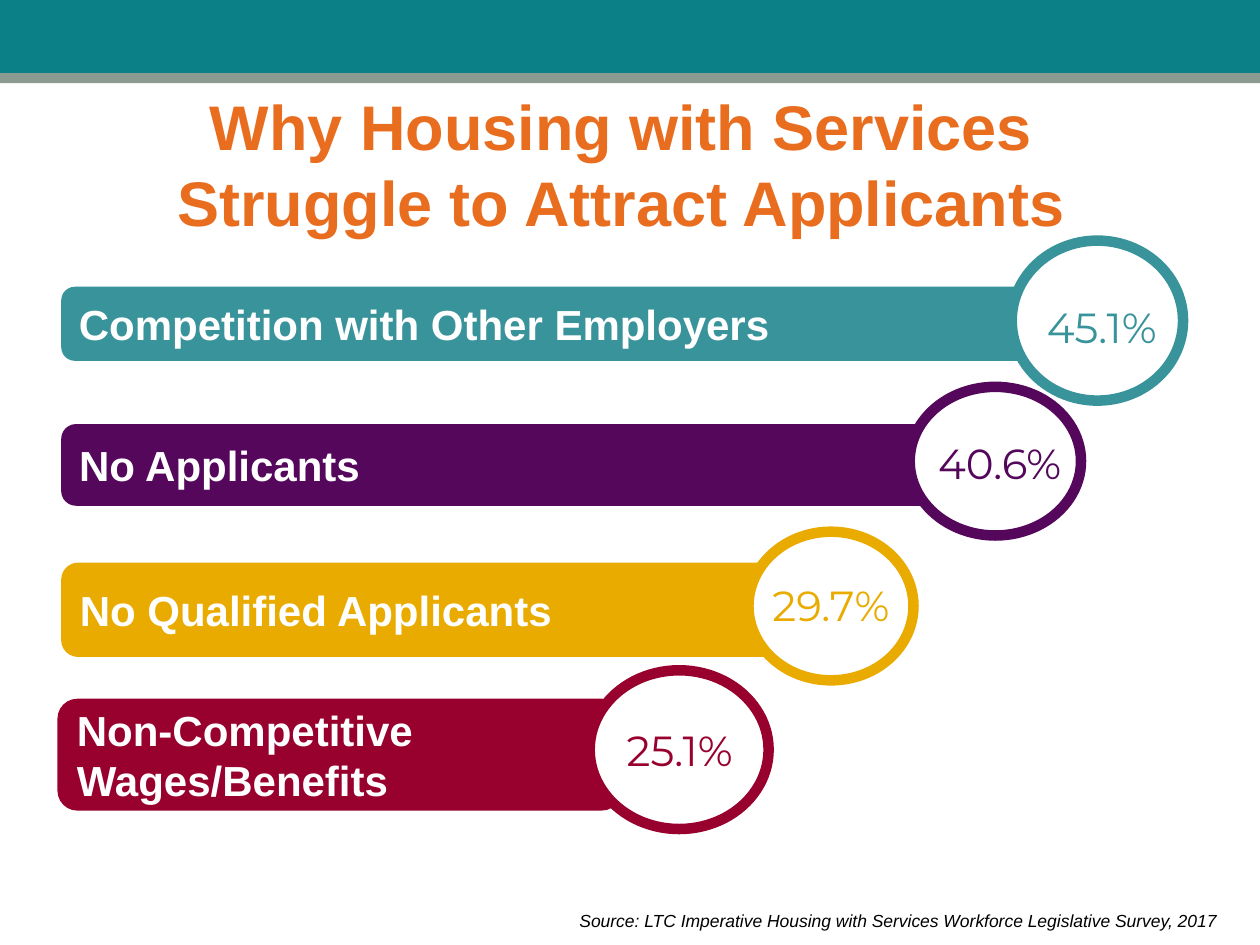
from pptx import Presentation
from pptx.dml.color import RGBColor
from pptx.enum.shapes import MSO_SHAPE
from pptx.enum.text import MSO_ANCHOR, PP_ALIGN
from pptx.util import Inches, Pt

WIDTH, HEIGHT = 10, 7.5
TEAL_BAND = RGBColor(0x0B, 0x81, 0x87)
GRAY_BAND = RGBColor(0x8B, 0x9B, 0x92)
ORANGE = RGBColor(0xE8, 0x6D, 0x1F)
TEAL = RGBColor(0x38, 0x93, 0x9B)
PURPLE = RGBColor(0x54, 0x07, 0x5B)
GOLD = RGBColor(0xEA, 0xAB, 0x00)
CRIMSON = RGBColor(0x98, 0x00, 0x2E)
WHITE = RGBColor(0xFF, 0xFF, 0xFF)
BLACK = RGBColor(0x00, 0x00, 0x00)

LABEL_SIZE = (1.43, 0.5)

# Reason, share, colour, bar area, circle area, label corner
REASONS = [
    ("Competition with Other Employers", "45.1%", TEAL,
     (0.5, 2.29, 7.75, 0.56), (8.03, 1.91, 1.36, 1.27), (8.03, 2.34)),
    ("No Applicants", "40.6%", PURPLE,
     (0.5, 3.38, 6.96, 0.62), (7.22, 3.07, 1.36, 1.18), (7.22, 3.42)),
    ("No Qualified Applicants", "29.7%", GOLD,
     (0.5, 4.48, 5.67, 0.72), (5.94, 4.22, 1.31, 1.18), (5.88, 4.55)),
    ("Non-Competitive\nWages/Benefits", "25.1%", CRIMSON,
     (0.47, 5.56, 4.45, 0.86), (4.68, 5.32, 1.42, 1.26), (4.68, 5.7)),
]


def inches(area):
    return [Inches(length) for length in area]


def write(box, text, size, color, align=PP_ALIGN.LEFT, font="Arial",
          bold=False, italic=False):
    frame = box.text_frame
    frame.word_wrap = True
    frame.text = text
    for para in frame.paragraphs:
        para.alignment = align
        for span in para.runs:
            span.font.name = font
            span.font.size = Pt(size)
            span.font.bold = bold
            span.font.italic = italic
            span.font.color.rgb = color


def add_block(page, kind, area, fill, line=None, line_width=0):
    block = page.shapes.add_shape(kind, *inches(area))
    block.shadow.inherit = False
    block.fill.solid()
    block.fill.fore_color.rgb = fill
    if line is None:
        block.line.fill.background()
    else:
        block.line.color.rgb = line
        block.line.width = Pt(line_width)
    return block


def add_text(page, area, text, size, color, **style):
    box = page.shapes.add_textbox(*inches(area))
    write(box, text, size, color, **style)


def add_title(page, text):
    title = page.shapes.title
    title.left, title.top, title.width, title.height = inches(
        (0.5, 0.67, WIDTH - 1, 1.25))
    title.text_frame.vertical_anchor = MSO_ANCHOR.MIDDLE
    write(title, text, 36, ORANGE, align=PP_ALIGN.CENTER, bold=True)


def add_reason(page, reason, share, color, bar_area, circle_area, corner):
    bar = add_block(page, MSO_SHAPE.ROUNDED_RECTANGLE, bar_area, color, color, 2)
    bar.text_frame.vertical_anchor = MSO_ANCHOR.MIDDLE
    write(bar, reason, 24, WHITE, bold=True)
    add_block(page, MSO_SHAPE.OVAL, circle_area, WHITE, color, 6)
    add_text(page, corner + LABEL_SIZE, share, 24, color,
             align=PP_ALIGN.CENTER, font="Montserrat")


def main():
    deck = Presentation()
    deck.slide_width, deck.slide_height = inches((WIDTH, HEIGHT))
    page = deck.slides.add_slide(deck.slide_layouts[5])

    # Header bands
    add_block(page, MSO_SHAPE.RECTANGLE, (0, 0, WIDTH, 0.58), TEAL_BAND)
    add_block(page, MSO_SHAPE.RECTANGLE, (0, 0.58, WIDTH, 0.08), GRAY_BAND)

    # Title; the vertical tab is a line break
    add_title(page, "Why Housing with Services \vStruggle to Attract Applicants ")

    # Bars with their shares
    for reason in REASONS:
        add_reason(page, *reason)

    # Source line
    add_text(page, (4.5, 7.17, 5.42, 0.19),
             "Source: LTC Imperative Housing with Services Workforce "
             "Legislative Survey, 2017", 10, BLACK, italic=True)

    deck.save("out.pptx")


if __name__ == "__main__":
    main()
